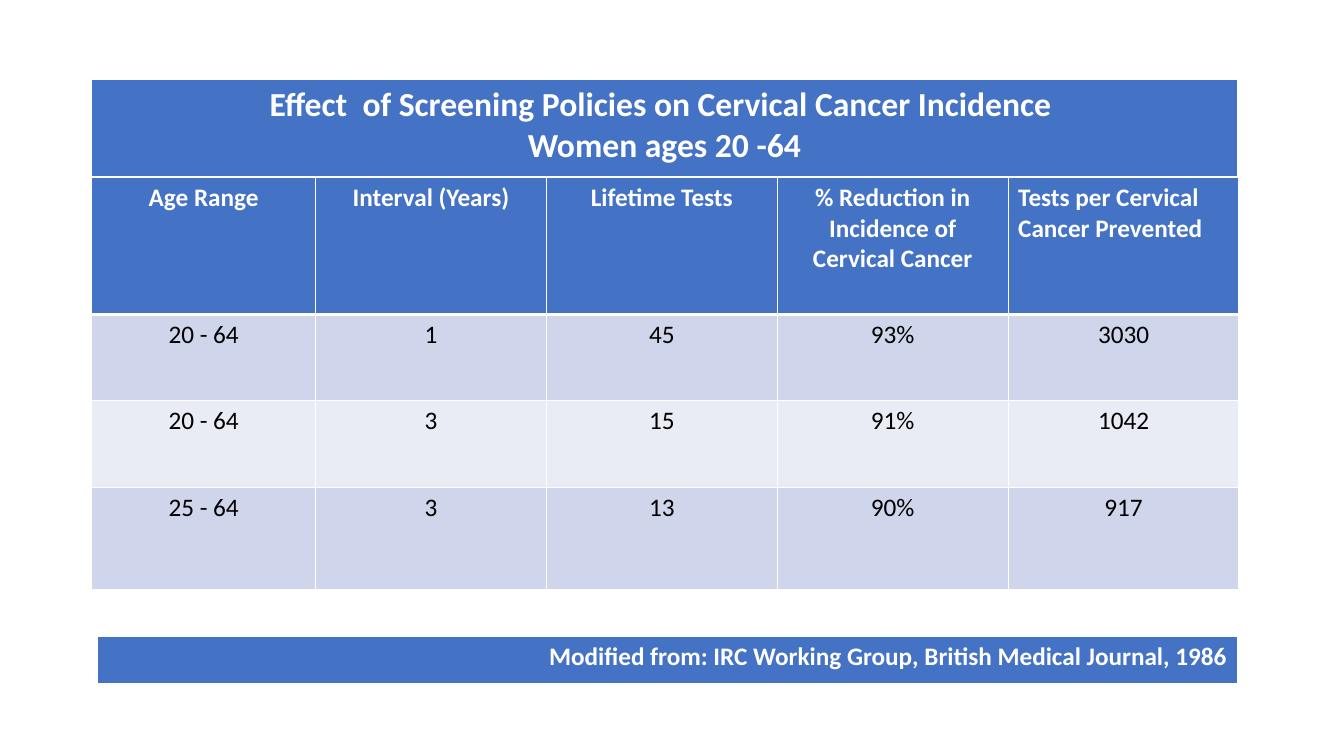
from lxml import etree
from pptx import Presentation
from pptx.dml.color import RGBColor
from pptx.enum.text import PP_ALIGN
from pptx.oxml.ns import qn
from pptx.util import Emu, Pt

LEFT, CENTER, RIGHT = PP_ALIGN.LEFT, PP_ALIGN.CENTER, PP_ALIGN.RIGHT

TITLE = [["Effect  of Screening Policies on Cervical Cancer Incidence \nWomen ages 20 -64"]]
RESULTS = [
    ["Age Range", "Interval (Years)", "Lifetime Tests",
     "% Reduction in Incidence of Cervical Cancer", "Tests per Cervical Cancer Prevented"],
    ["20 - 64", "1", "45", "93%", "3030"],
    ["20 - 64", "3", "15", "91%", "1042"],
    ["25 - 64", "3", "13", "90%", "917"],
]
SOURCE = [["Modified from: IRC Working Group, British Medical Journal, 1986"]]

FONT = "Calibri"
WHITE, BLACK, BLUE = "FFFFFF", "000000", "4472C4"
BANDS = ["CFD5EA", "E9EBF5"]
PX = 9144  # 100 px to the inch


def px(n):
    return Emu(n * PX)


def rgb(color):
    return RGBColor.from_string(color)


def set_borders(cell, bottom):
    """Draw white 1 pt borders, with the bottom one at the given width."""
    tc_pr = cell._tc.get_or_add_tcPr()
    for i, (side, width) in enumerate(zip("LRTB", (1, 1, 1, bottom))):
        ln = etree.Element(qn(f"a:ln{side}"), w=str(Pt(width)))
        fill = etree.SubElement(ln, qn("a:solidFill"))
        etree.SubElement(fill, qn("a:srgbClr"), val=WHITE)
        tc_pr.insert(i, ln)


def add_grid(slide, rows, left, top, widths, heights, size=18, align=CENTER):
    """Add a table with a blue first row and banded rows below it."""
    frame = slide.shapes.add_table(len(rows), len(widths), px(left), px(top),
                                   px(sum(widths)), px(sum(heights)))
    table = frame.table
    for column, width in zip(table.columns, widths):
        column.width = px(width)
    for r, (texts, height) in enumerate(zip(rows, heights)):
        table.rows[r].height = px(height)
        header = r == 0
        for c, text in enumerate(texts):
            cell = table.cell(r, c)
            cell.text = text
            cell.fill.solid()
            cell.fill.fore_color.rgb = rgb(BLUE if header else BANDS[(r - 1) % 2])
            set_borders(cell, 3 if header else 1)
            for p in cell.text_frame.paragraphs:
                p.alignment = align
                p.font.name = FONT
                p.font.size = Pt(size)
                p.font.bold = header
                p.font.color.rgb = rgb(WHITE if header else BLACK)
    return table


prs = Presentation()
prs.slide_width, prs.slide_height = px(1333), px(750)
slide = prs.slides.add_slide(prs.slide_layouts[6])

add_grid(slide, TITLE, 91, 79, [1136], [97], size=24)
results = add_grid(slide, RESULTS, 91, 176, [222] + [229] * 4, [136, 85, 87, 101])
results.cell(0, 4).text_frame.paragraphs[0].alignment = LEFT
add_grid(slide, SOURCE, 97, 631, [1130], [48], align=RIGHT)

prs.save("out.pptx")
